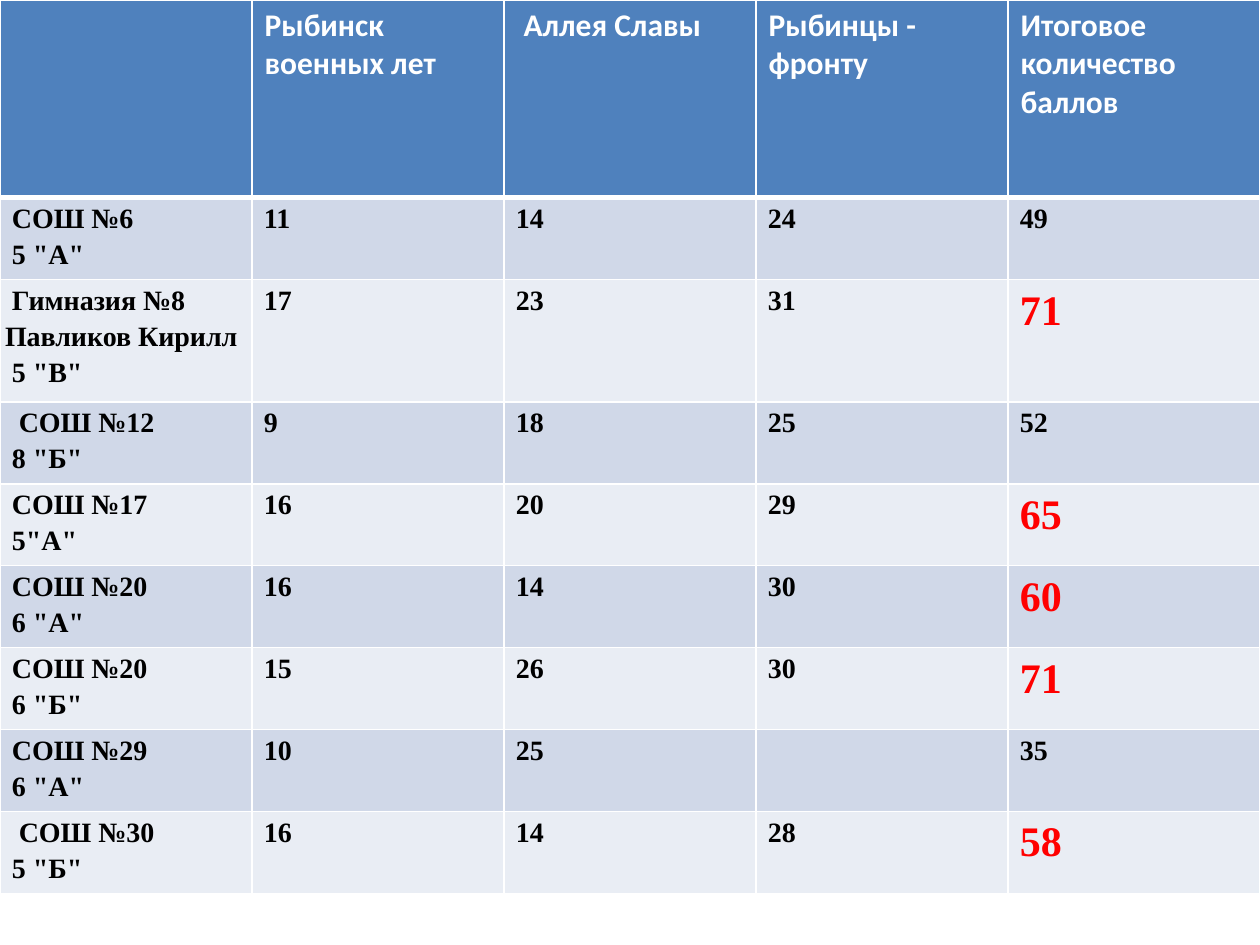
from lxml import etree
from pptx import Presentation
from pptx.dml.color import RGBColor
from pptx.oxml.ns import qn
from pptx.util import Inches, Pt

# Content: headings, then (team lines as (text, indent steps), scores)
HEADS = ["", "Рыбинск военных лет", "Аллея Славы", "Рыбинцы - фронту",
         "Итоговое количество баллов"]
TEAMS = [
    ([("СОШ №6", 1), ('5 "А"', 1)], [11, 14, 24]),
    ([("Гимназия №8", 1), ("Павликов Кирилл", 0), ('5 "В"', 1)], [17, 23, 31]),
    ([("СОШ №12", 2), ('8 "Б"', 1)], [9, 18, 25]),
    ([("СОШ №17", 1), ('5"А"', 1)], [16, 20, 29]),
    ([("СОШ №20", 1), ('6 "А"', 1)], [16, 14, 30]),
    ([("СОШ №20", 1), ('6 "Б"', 1)], [15, 26, 30]),
    ([("СОШ №29", 1), ('6 "А"', 1)], [10, 25, None]),
    ([("СОШ №30", 2), ('5 "Б"', 1)], [16, 14, 28]),
]
TOP_SCORE = 58  # totals from here up are highlighted

BLUE = RGBColor(0x4F, 0x81, 0xBD)
BANDS = [RGBColor(0xD0, 0xD8, 0xE8), RGBColor(0xE9, 0xED, 0xF4)]
WHITE = RGBColor(0xFF, 0xFF, 0xFF)
BLACK = RGBColor(0, 0, 0)
RED = RGBColor(0xFF, 0, 0)

HEAD_H, ROW_H, TALL_H = 1.57, 0.65, 0.97
COL_W = 2
STEP = Inches(0.055)


def paint(cell, fill, top=1, low=1):
    """Fill a cell and give it white borders."""
    cell.fill.solid()
    cell.fill.fore_color.rgb = fill
    props = cell._tc.get_or_add_tcPr()
    sides = [("a:lnL", 1), ("a:lnR", 1), ("a:lnT", top), ("a:lnB", low)]
    for i, (tag, width) in enumerate(sides):
        line = etree.Element(qn(tag), w=str(Pt(width)))
        solid = etree.SubElement(line, qn("a:solidFill"))
        etree.SubElement(solid, qn("a:srgbClr"), val=str(WHITE))
        props.insert(i, line)


def write(cell, lines, face, size, color, space=None):
    """Put (text, indent steps) lines into a cell, one paragraph each."""
    frame = cell.text_frame
    for i, (text, steps) in enumerate(lines):
        para = frame.add_paragraph() if i else frame.paragraphs[0]
        if space:
            para.line_spacing = space
        if steps:
            props = para._p.get_or_add_pPr()
            props.set("marL", str(steps * STEP))
            props.set("indent", "0")
        run = para.add_run()
        run.text = text
        run.font.name = face
        run.font.size = Pt(size)
        run.font.bold = True
        run.font.color.rgb = color


def body(cell, lines, size=16, color=BLACK):
    cell.margin_left = cell.margin_right = Inches(0.04)
    cell.margin_top = cell.margin_bottom = Inches(0.01)
    write(cell, lines, "Times New Roman", size, color, 1.15)


prs = Presentation()
prs.slide_width, prs.slide_height = Inches(10), Inches(7.5)
slide = prs.slides.add_slide(prs.slide_layouts[6])

# Table grid
highs = [HEAD_H] + [TALL_H if len(team) > 2 else ROW_H for team, _ in TEAMS]
table = slide.shapes.add_table(len(highs), len(HEADS), 0, 0,
                               Inches(COL_W * len(HEADS)),
                               Inches(sum(highs))).table
for col in table.columns:
    col.width = Inches(COL_W)
for row, high in zip(table.rows, highs):
    row.height = Inches(high)

# Heading row
for c, head in enumerate(HEADS):
    cell = table.cell(0, c)
    paint(cell, BLUE, low=3)
    if head:
        write(cell, [(head, int(c == 2))], "Calibri", 18, WHITE)

# Team rows, with the total worked out
for r, (team, scores) in enumerate(TEAMS, 1):
    for c in range(len(HEADS)):
        paint(table.cell(r, c), BANDS[(r - 1) % 2], top=3 if r == 1 else 1)
    body(table.cell(r, 0), team)
    for c, score in enumerate(scores, 1):
        if score is not None:
            body(table.cell(r, c), [(str(score), 1)])
    total = sum(score or 0 for score in scores)
    look = (24, RED) if total >= TOP_SCORE else (16, BLACK)
    body(table.cell(r, len(HEADS) - 1), [(str(total), 1)], *look)

prs.save("out.pptx")
